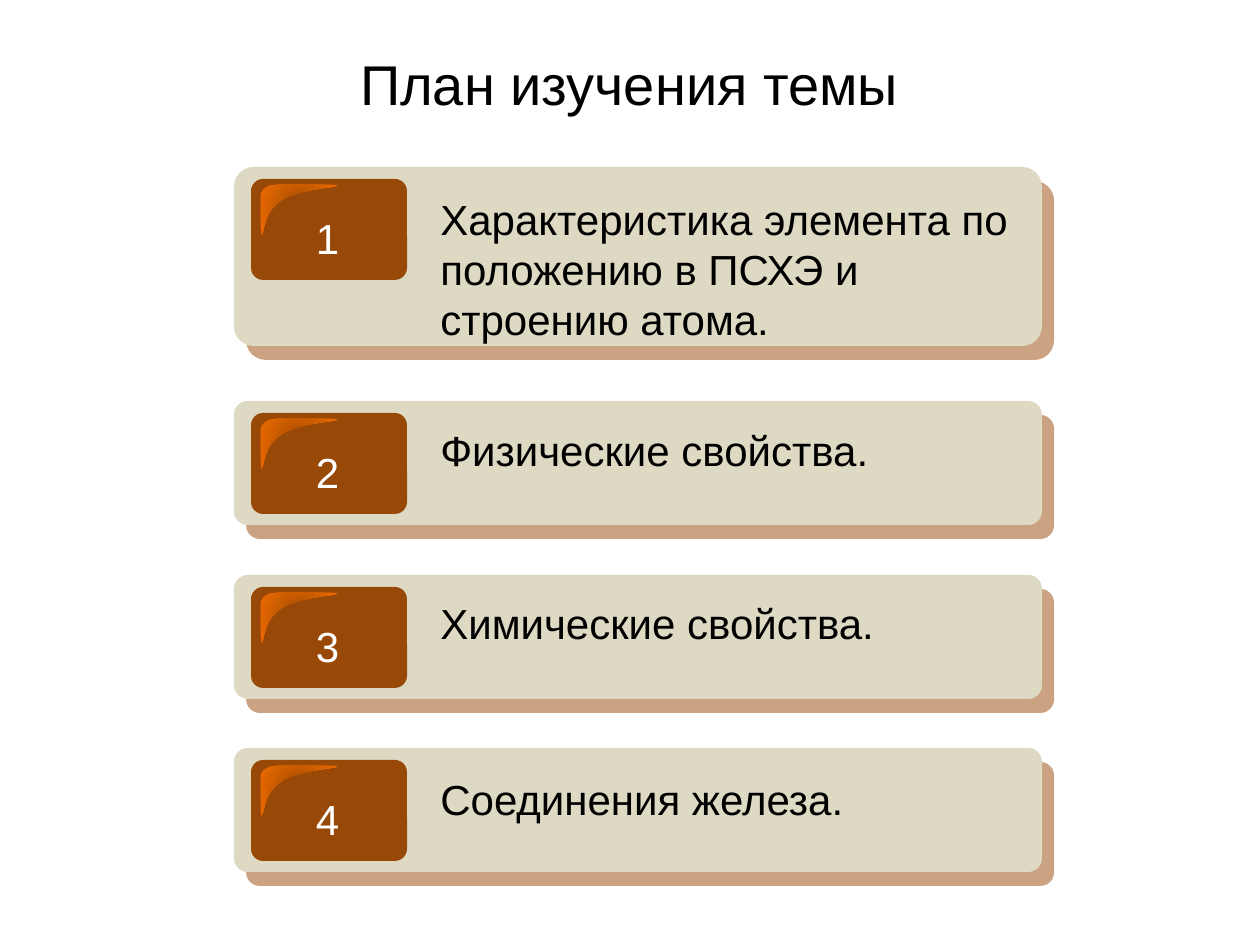
from lxml import etree
from pptx import Presentation
from pptx.dml.color import RGBColor
from pptx.enum.shapes import MSO_SHAPE
from pptx.enum.text import MSO_ANCHOR, MSO_AUTO_SIZE, PP_ALIGN
from pptx.oxml import parse_xml
from pptx.oxml.ns import nsdecls, qn
from pptx.util import Emu, Pt

ROUNDED = MSO_SHAPE.ROUNDED_RECTANGLE
MIDDLE = MSO_ANCHOR.MIDDLE
FIT_TEXT = MSO_AUTO_SIZE.SHAPE_TO_FIT_TEXT
LEFT, CENTER = PP_ALIGN.LEFT, PP_ALIGN.CENTER

PX = 914400 / 126
FONT = "Arial"
COLORS = {
    "text": "000000",
    "number": "FFFFFF",
    "card": "DDD9C3",
    "badge": "984807",
    "gloss_dark": "8D4000",
    "gloss_middle": "C85B00",
    "gloss_light": "EE6B00",
}
GLOSS_STOPS = [(0, "gloss_dark"), (50000, "gloss_middle"), (100000, "gloss_light")]

CARD_LEFT, CARD_WIDTH = 234, 808
# top, height, text top, text height, text
CARDS = [
    (167, 179, 187, 165, "Характеристика элемента по положению в ПСХЭ и строению атома."),
    (401, 124, 418, 64, "Физические свойства."),
    (575, 124, 591, 64, "Химические свойства."),
    (748, 124, 767, 64, "Соединения железа."),
]

# Gloss outline from its top left corner: one point is a line, three are a Bezier curve
GLOSS_START = (15, 0)
GLOSS_SEGMENTS = [
    [(7, 0), (0, 5), (0, 10)],
    [(0, 50)],
    [(4, 50), (1, 27), (21, 15)],
    [(40, 3), (78, 3), (77, 0)],
]


def px(value):
    return Emu(round(value * PX))


def color(name):
    return RGBColor.from_string(COLORS[name])


def write_text(frame, text, size=24, ink="text", align=LEFT):
    paragraph = frame.paragraphs[0]
    paragraph.alignment = align
    run = paragraph.add_run()
    run.text = text
    run.font.name = FONT
    run.font.size = Pt(size)
    run.font.color.rgb = color(ink)


def bend_lines(shape, segments):
    """Turn the straight lines of a freeform into curves where a segment has three points."""
    lines = list(shape._element.iter(qn("a:lnTo")))
    for line, points in zip(lines, segments):
        if len(points) == 3:
            curve = etree.Element(qn("a:cubicBezTo"))
            for x, y in points:
                etree.SubElement(curve, qn("a:pt"), x=str(int(px(x))), y=str(int(px(y))))
            line.getparent().replace(line, curve)


class PlanSlide:
    """Holds the current slide and draws its elements in one style."""

    def __init__(self, presentation):
        self.slide = presentation.slides.add_slide(presentation.slide_layouts[5])

    def title(self, text, left, top, width, height):
        """Format the title and bring it in front of the cards."""
        shape = self.slide.shapes.title
        shape.left, shape.top = px(left), px(top)
        shape.width, shape.height = px(width), px(height)
        shape._element.spPr.append(parse_xml(
            f'<a:prstGeom {nsdecls("a")} prst="roundRect"><a:avLst/></a:prstGeom>'))
        shape.text_frame.vertical_anchor = MIDDLE
        write_text(shape.text_frame, text, size=32, align=CENTER)
        shape._element.getparent().append(shape._element)

    def box(self, shapes, left, top, width, height, fill, corner):
        shape = shapes.add_shape(ROUNDED, px(left), px(top), px(width), px(height))
        shape.adjustments[0] = corner
        shape.fill.solid()
        shape.fill.fore_color.rgb = color(fill)
        shape.line.fill.background()
        shape.shadow.inherit = False
        return shape

    def drop_shadow(self, shape):
        effects = shape._element.spPr.find(qn("a:effectLst"))
        shadow = etree.SubElement(effects, qn("a:outerShdw"), blurRad="0", dist=str(Pt(10.6)),
                                  dir=str(49 * 60000), algn="ctr", rotWithShape="0")
        ink = etree.SubElement(shadow, qn("a:srgbClr"), val=COLORS["badge"])
        etree.SubElement(ink, qn("a:alpha"), val="50000")

    def gloss(self, shapes, left, top):
        start_x, start_y = GLOSS_START
        builder = shapes.build_freeform(px(left + start_x), px(top + start_y))
        corners = [points[-1] for points in GLOSS_SEGMENTS]
        builder.add_line_segments([(px(left + x), px(top + y)) for x, y in corners], close=True)
        shape = builder.convert_to_shape()
        bend_lines(shape, GLOSS_SEGMENTS)
        shape.line.fill.background()
        shape.shadow.inherit = False
        shape.fill.gradient()
        properties = shape._element.spPr
        stops = "".join(
            f'<a:gs pos="{position}"><a:srgbClr val="{COLORS[name]}"/></a:gs>'
            for position, name in GLOSS_STOPS)
        gradient = parse_xml(
            f'<a:gradFill {nsdecls("a")} rotWithShape="1"><a:gsLst>{stops}</a:gsLst>'
            '<a:path path="circle"><a:fillToRect l="50000" t="50000" r="50000" b="50000"/>'
            '</a:path></a:gradFill>')
        properties.replace(properties.find(qn("a:gradFill")), gradient)

    def label(self, shapes, text, left, top, width, height, wrap=True, **text_format):
        shape = shapes.add_textbox(px(left), px(top), px(width), px(height))
        shape.text_frame.word_wrap = wrap
        shape.text_frame.auto_size = FIT_TEXT
        write_text(shape.text_frame, text, **text_format)

    def card(self, number, top, height, text_top, text_height, text):
        shapes = self.slide.shapes.add_group_shape().shapes
        panel = self.box(shapes, CARD_LEFT, top, CARD_WIDTH, height, "card", 0.11)
        self.drop_shadow(panel)
        self.box(shapes, CARD_LEFT + 17, top + 12, 156, 101, "badge", 0.12)
        self.gloss(shapes, CARD_LEFT + 27, top + 18)
        self.label(shapes, str(number), CARD_LEFT + 69, top + 39, 49, 64,
                   wrap=False, ink="number", align=CENTER)
        self.label(shapes, text, CARD_LEFT + 194, text_top, 595, text_height)


def main():
    presentation = Presentation()
    presentation.slide_width, presentation.slide_height = px(1260), px(945)
    plan = PlanSlide(presentation)
    for number, card in enumerate(CARDS, start=1):
        plan.card(number, *card)
    plan.title("План изучения темы", 246, 38, 767, 91)
    presentation.save("out.pptx")


if __name__ == "__main__":
    main()
